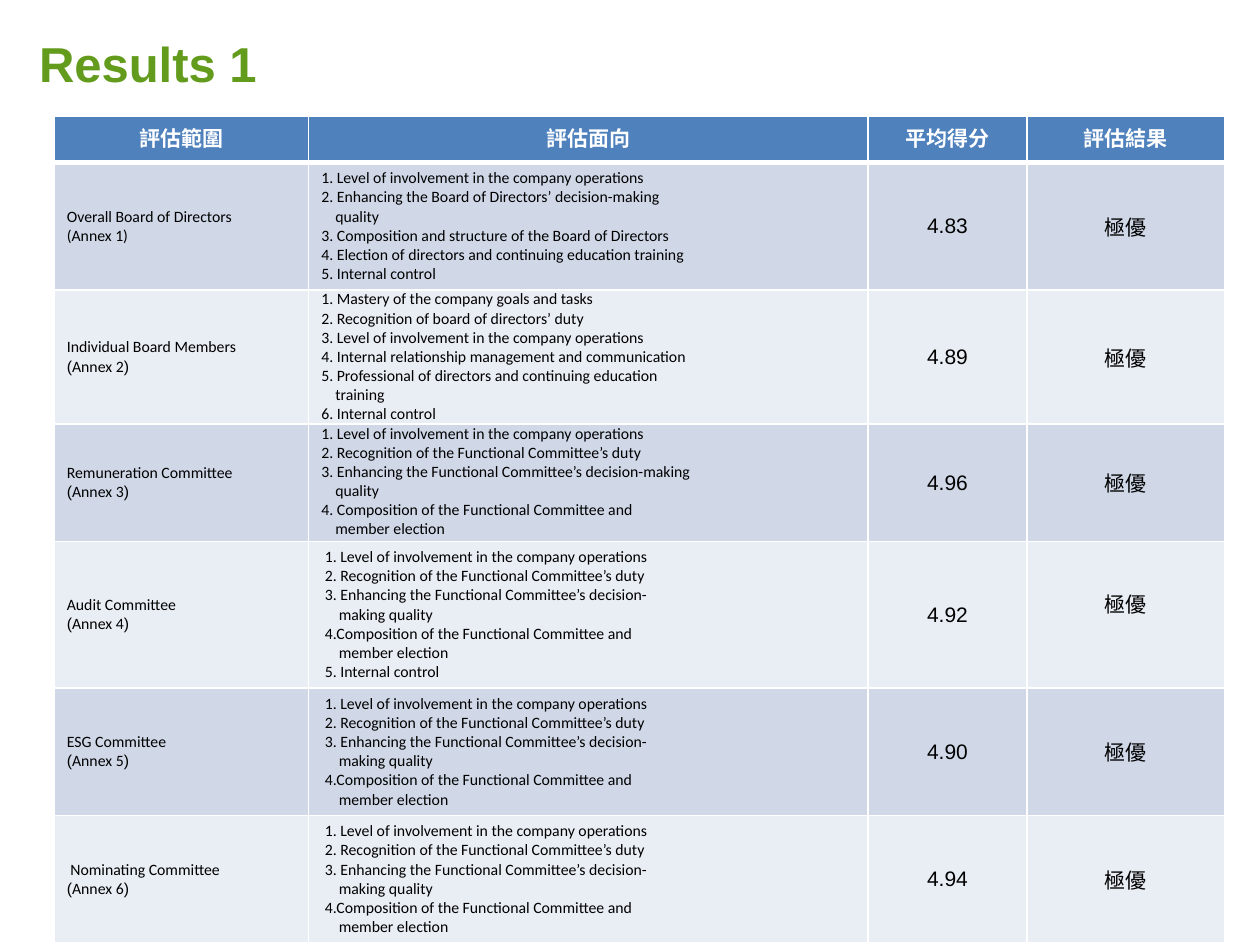
import pptx
import pptx.dml.color
import pptx.enum.text
import pptx.oxml
import pptx.oxml.ns
import pptx.util

Pt = pptx.util.Pt
ALIGN = pptx.enum.text.PP_ALIGN
ANCHOR = pptx.enum.text.MSO_ANCHOR

COLUMN_WIDTHS = [145.44, 319.68, 90.72, 113.04]
ROW_HEIGHTS = [26.64, 72.72, 76.32, 66.96, 83.52, 72.72, 72.72]
HEADINGS = ["評估範圍", "評估面向", "平均得分", "評估結果"]
RATING = "極優"
INSET = 7.2

COMMITTEE_ASPECTS = [
    "1. Level of involvement in the company operations",
    "2. Recognition of the Functional Committee’s duty",
    "3. Enhancing the Functional Committee’s decision-",
    "making quality",
    "4.Composition of the Functional Committee and",
    "member election",
]
RESULTS = [
    ("Overall Board of Directors", "4.83", [
        "1. Level of involvement in the company operations",
        "2. Enhancing the Board of Directors’ decision-making",
        "quality",
        "3. Composition and structure of the Board of Directors",
        "4. Election of directors and continuing education training",
        "5. Internal control",
    ]),
    ("Individual Board Members", "4.89", [
        "1. Mastery of the company goals and tasks",
        "2. Recognition of board of directors’ duty",
        "3. Level of involvement in the company operations",
        "4. Internal relationship management and communication",
        "5. Professional of directors and continuing education",
        "training",
        "6. Internal control",
    ]),
    ("Remuneration Committee", "4.96", [
        "1. Level of involvement in the company operations",
        "2. Recognition of the Functional Committee’s duty",
        "3. Enhancing the Functional Committee’s decision-making",
        "quality",
        "4. Composition of the Functional Committee and",
        "member election",
    ]),
    ("Audit Committee", "4.92", COMMITTEE_ASPECTS + ["5. Internal control"]),
    ("ESG Committee", "4.90", COMMITTEE_ASPECTS),
    ("Nominating Committee", "4.94", COMMITTEE_ASPECTS),
]


def color(hex_string):
    return pptx.dml.color.RGBColor.from_string(hex_string)


def format_font(font, size, name, hex_string, bold=False):
    font.size = Pt(size)
    font.name = name
    font.bold = bold
    font.color.rgb = color(hex_string)


def set_borders(cell, top, bottom):
    properties = cell._tc.get_or_add_tcPr()
    widths = [("lnL", 1), ("lnR", 1), ("lnT", top), ("lnB", bottom)]
    for index, (tag, width) in enumerate(widths):
        line = pptx.oxml.parse_xml(
            f'<a:{tag} {pptx.oxml.ns.nsdecls("a")} w="{Pt(width)}">'
            f'<a:solidFill><a:srgbClr val="FFFFFF"/></a:solidFill></a:{tag}>')
        properties.insert(index, line)


def fill_cell(cell, lines, size, name, hex_string, bold=False, alignment=ALIGN.LEFT):
    frame = cell.text_frame
    frame.text = "\n".join(lines)
    for paragraph in frame.paragraphs:
        paragraph.alignment = alignment
        for run in paragraph.runs:
            format_font(run.font, size, name, hex_string, bold)


def indent(paragraph, points):
    paragraph._p.get_or_add_pPr().set("marL", str(Pt(points)))


def fill_scope(cell, scope, number):
    fill_cell(cell, [scope, f"(Annex {number})"], 9, "Calibri", "000000")
    if number > 1:
        annex = cell.text_frame.paragraphs[1]
        annex.text = ""
        for text, name in [("(", "Arial"), (f"Annex {number}", "Calibri"), (")", "Arial")]:
            run = annex.add_run()
            run.text = text
            format_font(run.font, 9, name, "000000")
    if scope.startswith("Nominating"):
        indent(cell.text_frame.paragraphs[0], 2)


def fill_aspects(cell, aspects, number):
    fill_cell(cell, aspects, 9, "Calibri", "000000")
    for paragraph in cell.text_frame.paragraphs:
        if not paragraph.text[0].isdigit():
            indent(paragraph, 8)
    if number in (2, 3):
        cell.vertical_anchor = ANCHOR.TOP
        cell.margin_top = cell.margin_bottom = 0
    elif number > 3:
        cell.margin_left = Pt(INSET + 2)


def add_title(slide, left, top, width, height):
    title = slide.shapes.title
    title.left, title.top, title.width, title.height = map(Pt, (left, top, width, height))
    frame = title.text_frame
    frame.text = "Results 1"
    frame.vertical_anchor = ANCHOR.BOTTOM
    frame.auto_size = pptx.enum.text.MSO_AUTO_SIZE.NONE
    paragraph = frame.paragraphs[0]
    paragraph.alignment = ALIGN.LEFT
    format_font(paragraph.runs[0].font, 28, "Arial", "639B1C", True)


def add_results_table(slide, left, top):
    table = slide.shapes.add_table(
        len(ROW_HEIGHTS), len(COLUMN_WIDTHS), Pt(left), Pt(top),
        Pt(sum(COLUMN_WIDTHS)), Pt(sum(ROW_HEIGHTS))).table
    for column, width in zip(table.columns, COLUMN_WIDTHS):
        column.width = Pt(width)
    for number, (row, height) in enumerate(zip(table.rows, ROW_HEIGHTS)):
        row.height = Pt(height)
        for cell in row.cells:
            cell.fill.solid()
            fill = "4F81BD" if number == 0 else ("E9EDF4", "D0D8E8")[number % 2]
            cell.fill.fore_color.rgb = color(fill)
            cell.vertical_anchor = ANCHOR.MIDDLE if number else ANCHOR.TOP
            set_borders(cell, 3 if number == 1 else 1, 3 if number == 0 else 1)

    for cell, heading in zip(table.rows[0].cells, HEADINGS):
        fill_cell(cell, [heading], 12, "Arial", "FFFFFF", True, ALIGN.CENTER)
    for number, (scope, score, aspects) in enumerate(RESULTS, start=1):
        fill_scope(table.cell(number, 0), scope, number)
        fill_aspects(table.cell(number, 1), aspects, number)
        for column, text in [(2, score), (3, RATING)]:
            fill_cell(table.cell(number, column), [text], 12, "Arial", "000000",
                      alignment=ALIGN.CENTER)
    table.cell(4, 3).margin_bottom = Pt(17)


def main():
    presentation = pptx.Presentation()
    presentation.slide_width = Pt(720)
    presentation.slide_height = Pt(540)
    slide = presentation.slides.add_slide(presentation.slide_layouts[5])
    add_title(slide, 15.12, 15.12, 656.64, 41.04)
    add_results_table(slide, 31, 66.24)
    presentation.save("out.pptx")


if __name__ == "__main__":
    main()
